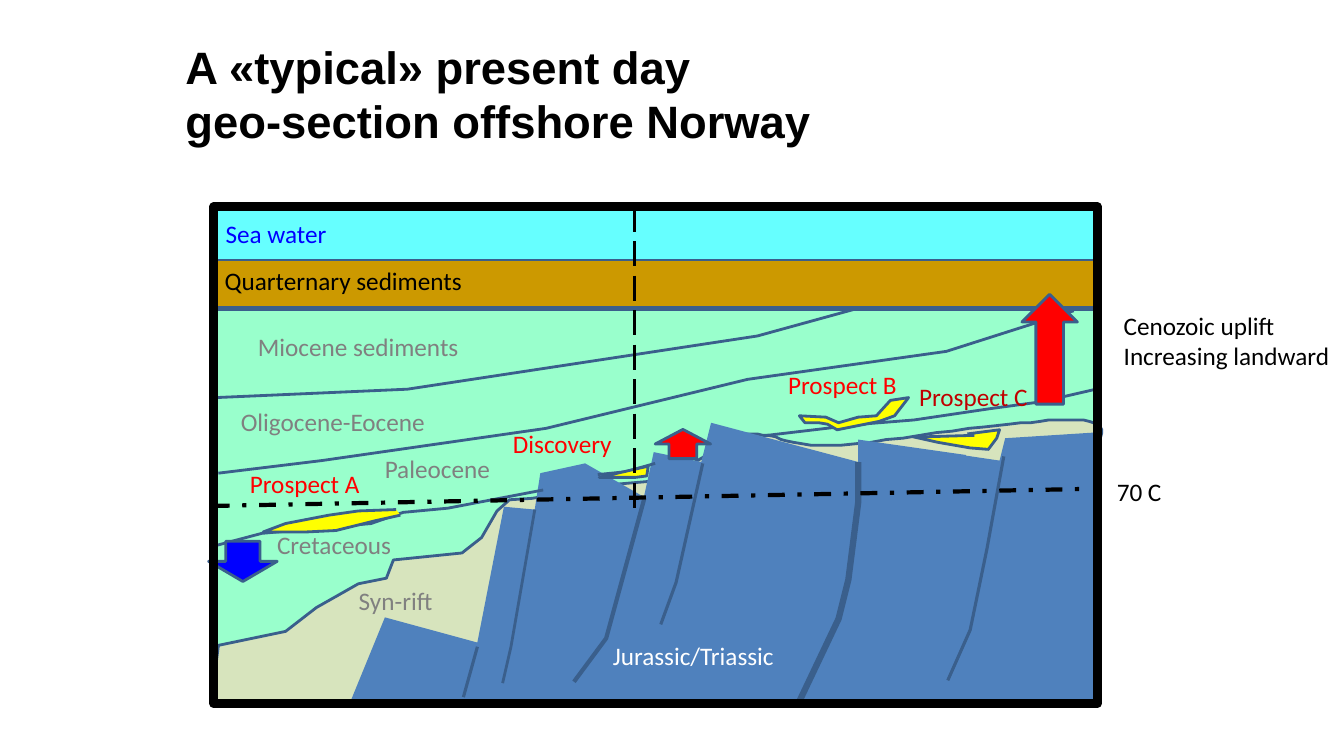
from lxml.etree import SubElement
from pptx import Presentation
from pptx.dml.color import RGBColor as RGB
from pptx.enum.dml import MSO_LINE as DASH
from pptx.enum.shapes import MSO_CONNECTOR as WIRE, MSO_SHAPE as FORM
from pptx.enum.text import MSO_ANCHOR as ANCHOR, MSO_AUTO_SIZE as FIT, PP_ALIGN as ALIGN
from pptx.oxml.ns import qn
from pptx.util import Pt

HUES = {
    "black": "000000", "white": "FFFFFF", "grey": "808080", "edge": "3A5F8C",
    "mint": "99FFCC", "sand": "D7E4BD", "rock": "4F81BD", "brown": "CC9900",
    "sea": "66FFFF", "blue": "0000FF", "red": "FF0000", "dark": "C00000",
    "yellow": "FFFF00",
}


def write(frame, text, hue="black", size=18, face="Calibri", bold=False):
    frame.text = text
    for par in frame.paragraphs:
        par.alignment = ALIGN.LEFT
        for run in par.runs:
            font = run.font
            font.name, font.size, font.bold = face, Pt(size), bold
            font.color.rgb = RGB.from_string(HUES[hue])


def paint(shape, fill=None, width=2, edge="edge"):
    shape.shadow.inherit = False
    if fill:
        shape.fill.solid()
        shape.fill.fore_color.rgb = RGB.from_string(HUES[fill])
    else:
        shape.fill.background()
    if width:
        shape.line.width = Pt(width)
        shape.line.color.rgb = RGB.from_string(HUES[edge])
    else:
        shape.line.fill.background()


deck = Presentation()
deck.slide_width, deck.slide_height = Pt(960), Pt(540)
slide = deck.slides.add_slide(deck.slide_layouts[5])
shapes = slide.shapes

# Title
title = shapes.title
title.left, title.top, title.width, title.height = Pt(125.3), Pt(21.6), Pt(777.6), Pt(90)
title.text_frame.auto_size = FIT.NONE
title.text_frame.vertical_anchor = ANCHOR.MIDDLE
write(title.text_frame, "A «typical» present day\vgeo-section offshore Norway",
      size=32.4, face="Arial", bold=True)

# Background of the section
base = shapes.add_shape(FORM.RECTANGLE, Pt(152.6), Pt(221), Pt(630.7), Pt(283))
paint(base, "mint")

# Outlines: fill, line width, closed, points; six numbers make a curve
rift = [
    (762, 357), (801, 413, 415, 448, 406, 500), (151, 501), (156, 461),
    (180, 456), (204, 451), (226, 434), (256, 417), (276, 413), (281, 400),
    (330, 395), (344, 384), (355, 365), (364, 357), (380, 356), (439, 346),
    (474, 343), (531, 310), (552, 308, 561, 319, 593, 318),
    (624, 317, 689, 305, 721, 303), (752, 300, 775, 297, 783, 303),
    (798, 308, 770, 330, 770, 338), (773, 343, 769, 348, 768, 352),
    (771, 354, 754, 332, 760, 340),
]
blocks = [
    (250, 502), (275, 441), (341, 459), (360, 362), (382, 364), (386, 338),
    (418, 331), (460, 355), (467, 323), (501, 330), (508, 302), (613, 330),
    (613, 314), (690, 325), (689, 502),
]
coast = [(687, 325), (714, 329), (718, 313), (781, 309), (782, 500), (684, 501)]
lens_a = [
    (283, 364), (256, 365), (235, 368), (204, 374), (188, 380), (219, 380),
    (240, 379), (268, 372), (286, 368),
]
lens_b = [
    (591, 303), (585, 302), (575, 302), (571, 297), (590, 298), (599, 302),
    (613, 298), (626, 297), (636, 286), (649, 284), (639, 297), (628, 301),
    (598, 307),
]
lens_c = [
    (696, 311), (662, 312), (652, 312), (670, 316), (693, 320), (706, 321),
    (712, 313), (714, 307), (691, 310),
]
find = [(463, 333), (462, 340), (454, 341), (443, 341), (428, 341)]
tops = [
    [(154, 284), (291, 278), (541, 240), (610, 221)],
    [(156, 338), (230, 329), (390, 306), (534, 271), (676, 251), (767, 222)],
    [(153, 390), (187, 381), (265, 374), (288, 366), (320, 363), (388, 350)],
    [(427, 339), (447, 337), (468, 331)],
    [(548, 311), (616, 303), (653, 300), (707, 292), (744, 287), (783, 278)],
]
faults = [
    (2.25, [(341, 462), (331, 498)]),
    (2, [(382, 364), (365, 462), (359, 488)]),
    (3, [(460, 357), (433, 456), (410, 487)]),
    (2.25, [(502, 331), (483, 416), (472, 446)]),
    (4.5, [(613, 330), (613, 359), (606, 414), (599, 442), (570, 503)]),
    (2.25, [(717, 326), (705, 392), (693, 450), (677, 486)]),
]
drawn = [("sand", 2, True, rift), ("rock", 0, True, coast), ("rock", 0, True, blocks)]
drawn += [(None, 2, False, top) for top in tops]
drawn += [("yellow", 2, False, lens_a), ("yellow", 2, True, find),
          ("yellow", 2, False, lens_c), ("yellow", 2, True, lens_b)]
drawn += [(None, width, False, fault) for width, fault in faults]

for fill, width, shut, points in drawn:
    path = [points[0]]
    for point in points[1:]:
        if len(point) == 2:
            path.append(point)
            continue
        ends = path[-1] + point
        for step in range(1, 13):
            t = step / 12
            parts = ((1 - t) ** 3, 3 * t * (1 - t) ** 2, 3 * t * t * (1 - t), t ** 3)
            path.append(tuple(sum(p * v for p, v in zip(parts, ends[axis::2]))
                              for axis in (0, 1)))
    pen = shapes.build_freeform(*path[0], scale=Pt(1))
    pen.add_line_segments(path[1:], close=shut)
    paint(pen.convert_to_shape(), fill, width)

# Upper layers and arrows
for form, x, y, w, h, fill, text, hue in [
    (FORM.RECTANGLE, 153.4, 181.4, 630, 38.2, "brown", "Quarternary sediments", "black"),
    (FORM.DOWN_ARROW, 149, 386.6, 49, 28.8, "blue", "", None),
    (FORM.UP_ARROW, 468, 306.7, 39.6, 20.9, "red", "", None),
    (FORM.UP_ARROW, 730, 210.2, 39.6, 78.5, "red", "", None),
    (FORM.RECTANGLE, 154, 147.6, 630, 38.2, "sea", "Sea water", "blue"),
]:
    part = shapes.add_shape(form, Pt(x), Pt(y), Pt(w), Pt(h))
    paint(part, fill)
    if text:
        part.text_frame.vertical_anchor = ANCHOR.MIDDLE
        write(part.text_frame, text, hue)

# Isotherm and well
for x, y, right, low, width, dash in [
    (152, 361.4, 777.6, 349.2, 3, DASH.DASH_DOT),
    (453, 147.6, 453, 363.6, 2.25, DASH.LONG_DASH),
]:
    wire = shapes.add_connector(WIRE.STRAIGHT, Pt(x), Pt(y), Pt(right), Pt(low))
    wire.line.width, wire.line.dash_style = Pt(width), dash
    wire.line.color.rgb = RGB.from_string(HUES["black"])
    SubElement(wire._element.spPr, qn("a:effectLst"))

# Frame
frame = shapes.add_shape(FORM.RECTANGLE, Pt(152.6), Pt(147.6), Pt(631.4), Pt(355))
paint(frame, None, 6, "black")

# Labels
for text, x, y, w, h, hue in [
    ("Miocene sediments", 177.1, 233.3, 160, 29, "grey"),
    ("Oligocene-Eocene", 164.9, 286.6, 147.6, 29, "grey"),
    ("Paleocene", 267.8, 320.4, 90.7, 29, "grey"),
    ("Cretaceous", 190.8, 374.4, 97.2, 29, "grey"),
    ("Syn-rift", 249.1, 414.7, 68.4, 29, "grey"),
    ("Jurassic/Triassic", 430.6, 453.6, 130.3, 29, "white"),
    ("Prospect A", 171.4, 331.2, 93.6, 29, "red"),
    ("Prospect B", 555.8, 260.6, 92.9, 29, "red"),
    ("Prospect C", 649.4, 268.6, 92.9, 29, "dark"),
    ("Discovery", 359.3, 302.4, 90, 29, "red"),
    ("70 C", 790.6, 337, 46.8, 29, "black"),
    ("Cenozoic uplift\nIncreasing landward", 795.6, 218.2, 162.7, 51, "black"),
]:
    label = shapes.add_textbox(Pt(x), Pt(y), Pt(w), Pt(h)).text_frame
    label.word_wrap, label.auto_size = False, FIT.SHAPE_TO_FIT_TEXT
    write(label, text, hue)

deck.save("out.pptx")
